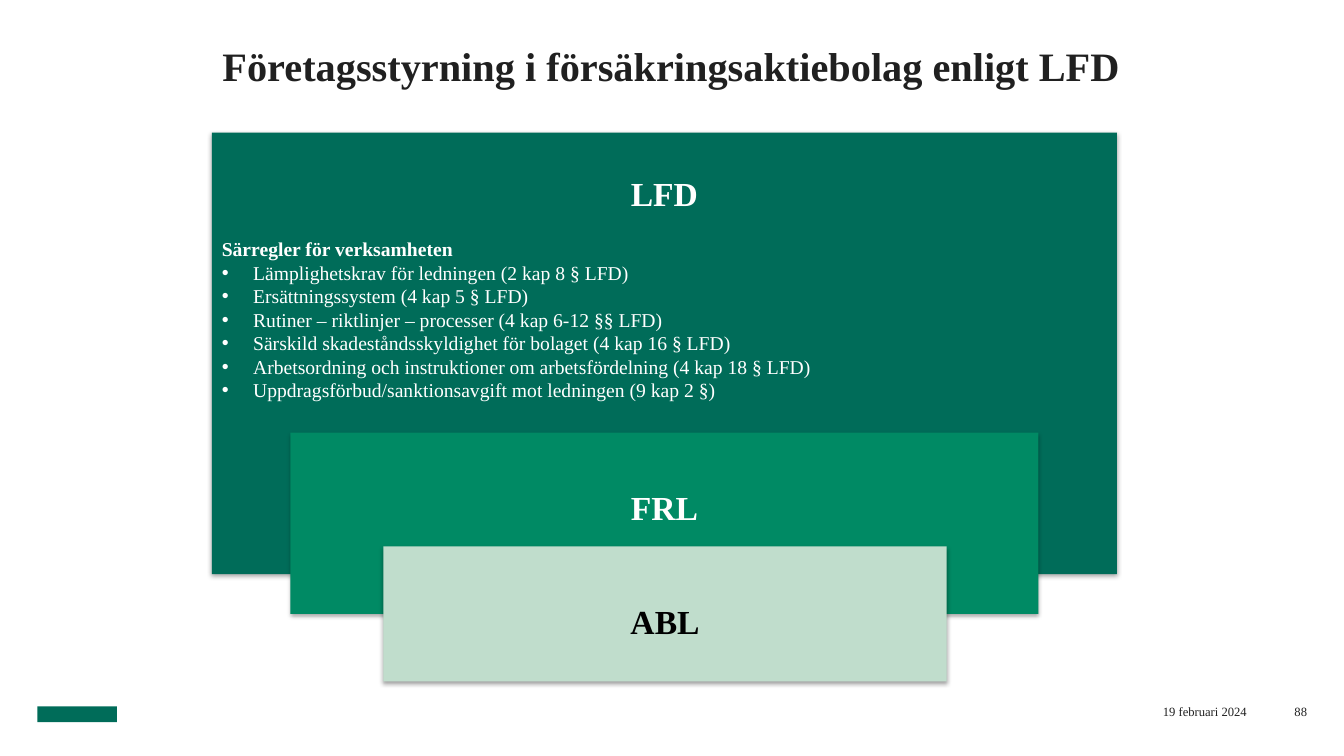
from lxml.etree import SubElement
from pptx import Presentation
from pptx.dml.color import RGBColor
from pptx.enum.shapes import MSO_SHAPE
from pptx.enum.text import MSO_ANCHOR, PP_ALIGN
from pptx.oxml.ns import qn
from pptx.util import Cm, Pt


def style(para, size, color, bold, align):
    para.alignment = align
    font = para.font
    font.name = "Times New Roman"
    font.size = Pt(size)
    font.bold = bold
    font.color.rgb = RGBColor.from_string(color)


def block(left, top, width, height, color):
    rect = slide.shapes.add_shape(MSO_SHAPE.RECTANGLE, Cm(left), Cm(top), Cm(width), Cm(height))
    rect.shadow.inherit = False
    rect.fill.solid()
    rect.fill.fore_color.rgb = RGBColor.from_string(color)
    rect.line.fill.background()
    return rect


deck = Presentation()
deck.slide_width = Cm(33.87)
deck.slide_height = Cm(19.05)
slide = deck.slides.add_slide(deck.slide_layouts[6])

block(0.94, 17.8, 2.01, 0.4, "006C59")

labels = [
    ("19 februari 2024", 27.23, 17.75, 4.19, 0.46, 9, False, PP_ALIGN.RIGHT),
    ("88", 32.33, 17.75, 0.61, 0.46, 9, False, PP_ALIGN.RIGHT),
    ("Företagsstyrning i försäkringsaktiebolag enligt LFD",
     4.52, 0.28, 24.79, 1.98, 28.8, True, PP_ALIGN.CENTER),
]
for text, left, top, width, height, size, bold, align in labels:
    frame = slide.shapes.add_textbox(Cm(left), Cm(top), Cm(width), Cm(height)).text_frame
    frame.margin_left = frame.margin_right = frame.margin_top = frame.margin_bottom = 0
    frame.word_wrap = True
    frame.vertical_anchor = MSO_ANCHOR.BOTTOM if bold else MSO_ANCHOR.TOP
    para = frame.paragraphs[0]
    para.text = text
    style(para, size, "202020", bold, align)

rules = [
    "Lämplighetskrav för ledningen (2 kap 8 § LFD)",
    "Ersättningssystem (4 kap 5 § LFD)",
    "Rutiner – riktlinjer – processer (4 kap 6-12 §§ LFD)",
    "Särskild skadeståndsskyldighet för bolaget (4 kap 16 § LFD)",
    "Arbetsordning och instruktioner om arbetsfördelning (4 kap 18 § LFD)",
    "Uppdragsförbud/sanktionsavgift mot ledningen (9 kap 2 §)",
]
laws = [
    ("LFD", 5.34, 3.34, 22.81, 11.13, "006C59", "FFFFFF", 1.02, rules),
    ("FRL", 7.32, 10.9, 18.85, 4.57, "008A64", "FFFFFF", 1.36, []),
    ("ABL", 9.66, 13.77, 14.2, 3.4, "C0DDCC", "000000", 1.36, []),
]
for name, left, top, width, height, fill, ink, inset, points in laws:
    rect = block(left, top, width, height, fill)
    effect = rect.element.spPr.find(qn("a:effectLst"))
    shade = SubElement(effect, qn("a:outerShdw"), blurRad=str(Pt(3.1)), dist=str(Pt(1.8)),
                       dir="5400000", rotWithShape="0")
    tint = SubElement(shade, qn("a:srgbClr"), val="000000")
    SubElement(tint, qn("a:alpha"), val="35000")

    frame = rect.text_frame
    frame.word_wrap = True
    frame.vertical_anchor = MSO_ANCHOR.TOP
    frame.margin_top = Cm(inset)
    para = frame.paragraphs[0]
    para.text = name
    style(para, 24, ink, True, PP_ALIGN.CENTER)
    if points:
        para = frame.add_paragraph()
        para.text = "Särregler för verksamheten"
        para.space_before = Pt(17)
        style(para, 14, ink, True, PP_ALIGN.LEFT)
    for point in points:
        para = frame.add_paragraph()
        para.text = point
        para.line_spacing = Pt(16.8)
        props = para._p.get_or_add_pPr()
        props.set("marL", str(Cm(0.79)))
        props.set("indent", str(-Cm(0.79)))
        SubElement(props, qn("a:buFont"), typeface="Arial")
        SubElement(props, qn("a:buChar"), char="•")
        style(para, 14, ink, False, PP_ALIGN.LEFT)

deck.save("out.pptx")
